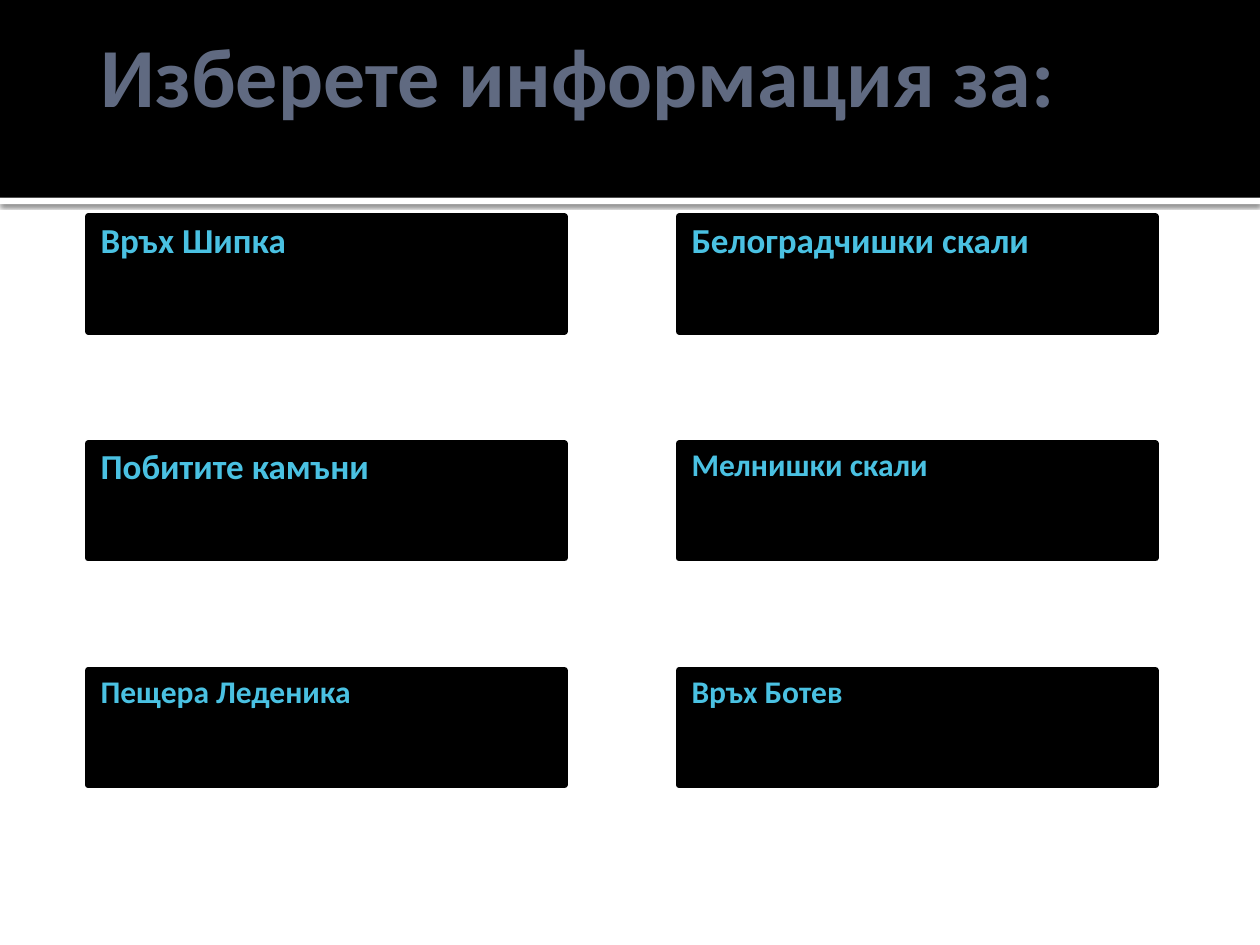
from dataclasses import dataclass

from lxml import etree
from pptx import Presentation
from pptx import util as u
from pptx.dml.color import RGBColor
from pptx.enum import shapes, text
from pptx.oxml import ns


@dataclass(frozen=True)
class Theme:
    font: str = "Calibri"
    black: str = "000000"
    white: str = "FFFFFF"
    heading: str = "606A81"
    label: str = "4AC1E2"
    heading_size: int = 48
    large: int = 20
    small: int = 18


THEME = Theme()
PLACES = [
    ("Връх Шипка", THEME.large),
    ("Белоградчишки скали", THEME.large),
    ("Побитите камъни", THEME.large),
    ("Мелнишки скали", THEME.small),
    ("Пещера Леденика", THEME.small),
    ("Връх Ботев", THEME.small),
]


def set_values(target, values):
    for name, value in values.items():
        setattr(target, name, value)


def place(shape, left, top, width, height):
    frame = {"left": left, "top": top, "width": width, "height": height}
    set_values(shape, {name: u.Inches(value) for name, value in frame.items()})


def add_rectangle(page, area, color):
    box = page.shapes.add_shape(shapes.MSO_SHAPE.RECTANGLE, *map(u.Inches, area))
    box.fill.solid()
    box.fill.fore_color.rgb = RGBColor.from_string(color)
    box.line.fill.background()
    box.shadow.inherit = False
    return box


def add_shadow(box):
    effects = box.element.spPr.find(ns.qn("a:effectLst"))
    shadow = etree.SubElement(
        effects, ns.qn("a:outerShdw"),
        blurRad=str(u.Pt(2.5)), dist=str(u.Pt(0.8)), dir="5400000",
    )
    color = etree.SubElement(shadow, ns.qn("a:srgbClr"), val=THEME.black)
    etree.SubElement(color, ns.qn("a:alpha"), val="60000")


def write(shape, wording, size, color, frame_values, para_values):
    frame = shape.text_frame
    set_values(frame, {"word_wrap": True, "auto_size": text.MSO_AUTO_SIZE.NONE, **frame_values})
    para = frame.paragraphs[0]
    set_values(para, {"alignment": text.PP_ALIGN.LEFT, **para_values})
    span = para.add_run()
    span.text = wording
    set_values(span.font, {"name": THEME.font, "size": u.Pt(size), "bold": True})
    span.font.color.rgb = RGBColor.from_string(color)


def add_header(page):
    add_shadow(add_rectangle(page, (0, 1.57, 10, 0.05), THEME.white))
    add_rectangle(page, (0, 0, 10, 1.57), THEME.black)
    title = page.shapes.title
    title.element.getparent().append(title.element)
    place(title, 0.7, 0, 8.91, 1.17)
    insets = {
        "margin_left": u.Inches(0.1),
        "margin_right": u.Inches(0.05),
        "margin_top": u.Inches(0.05),
        "margin_bottom": u.Inches(0.05),
        "vertical_anchor": text.MSO_ANCHOR.MIDDLE,
    }
    write(title, "Изберете информация за:", THEME.heading_size, THEME.heading, insets, {})


def add_place(page, index, wording, size):
    row, column = divmod(index, 2)
    area = (0.7 + column * 4.69, 1.72 + row * 1.8, 3.78, 0.91)
    box = add_rectangle(page, area, THEME.black)
    box.line.color.rgb = RGBColor.from_string(THEME.black)
    box.line.width = u.Pt(3.78)
    write(box, wording, size, THEME.label,
          {"vertical_anchor": text.MSO_ANCHOR.TOP}, {"line_spacing": 0.9})


def main():
    deck = Presentation()
    set_values(deck, {"slide_width": u.Inches(10), "slide_height": u.Inches(7.5)})
    page = deck.slides.add_slide(deck.slide_layouts[5])
    add_header(page)
    for index, (wording, size) in enumerate(PLACES):
        add_place(page, index, wording, size)
    deck.save("out.pptx")


if __name__ == "__main__":
    main()
